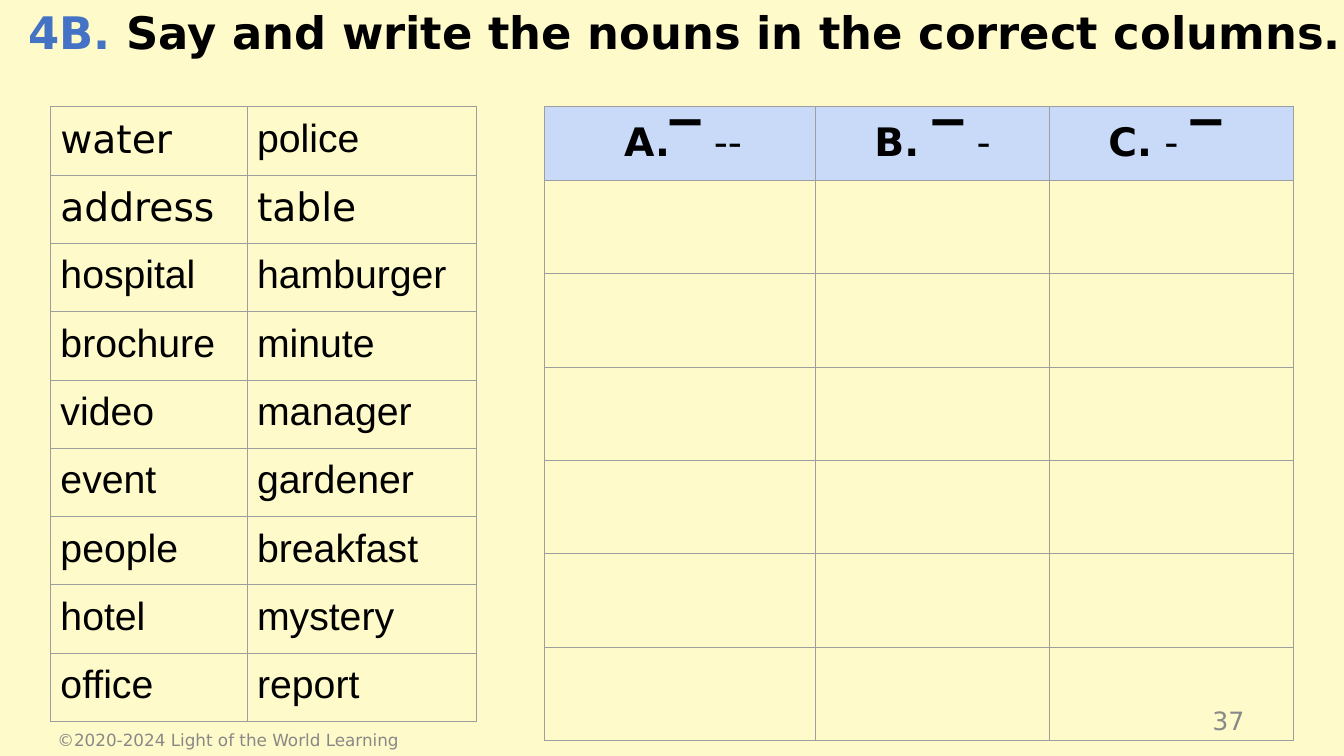
"""Build a slide for sorting nouns into three stress-pattern columns."""
from lxml import etree
from pptx import Presentation
from pptx.dml.color import RGBColor
from pptx.enum.text import MSO_ANCHOR, MSO_AUTO_SIZE, PP_ALIGN
from pptx.oxml.ns import qn
from pptx.util import Inches, Pt

TOP, MIDDLE = MSO_ANCHOR.TOP, MSO_ANCHOR.MIDDLE
LEFT, CENTER, RIGHT = PP_ALIGN.LEFT, PP_ALIGN.CENTER, PP_ALIGN.RIGHT
NO_AUTOFIT = MSO_AUTO_SIZE.NONE
CREAM = RGBColor(0xFE, 0xFA, 0xC9)
BLUE = RGBColor(0x44, 0x72, 0xC4)
PALE_BLUE = RGBColor(0xC9, 0xDA, 0xF8)
BLACK = RGBColor(0, 0, 0)
GRAY = RGBColor(0x88, 0x88, 0x88)
BORDER = RGBColor(0x9E, 0x9E, 0x9E)
SANS, ARIAL = "DejaVu Sans", "Arial"

WORDS = [
    ("water", "police"), ("address", "table"), ("hospital", "hamburger"),
    ("brochure", "minute"), ("video", "manager"), ("event", "gardener"),
    ("people", "breakfast"), ("hotel", "mystery"), ("office", "report"),
]
SANS_WORDS = {"water", "address", "table"}
PATTERNS = [
    [("▔ ", True), ("--", False)],
    [("B. ▔ ", True), ("-", False)],
    [("C.", True), (" - ", False), ("▔ ", True)],
]


def add_span(para, text, size, color, font=SANS, bold=False):
    span = para.add_run()
    span.text = text
    span.font.name = font
    span.font.size = Pt(size)
    span.font.bold = bold
    span.font.color.rgb = color


def add_grid(slide, left, widths, heights):
    frame = slide.shapes.add_table(
        len(heights), len(widths), Inches(left), Inches(1.06),
        Inches(sum(widths)), Inches(sum(heights)))
    grid = frame.table
    grid.first_row = grid.horz_banding = False
    for column, width in zip(grid.columns, widths):
        column.width = Inches(width)
    for row, height in zip(grid.rows, heights):
        row.height = Inches(height)
    for cell in grid.iter_cells():
        cell.margin_left = cell.margin_right = Inches(0.1)
        cell.margin_top = cell.margin_bottom = Inches(0.1)
        properties = cell._tc.get_or_add_tcPr()
        for side in ("a:lnL", "a:lnR", "a:lnT", "a:lnB"):
            line = etree.SubElement(properties, qn(side), w=str(Pt(0.75)))
            fill = etree.SubElement(line, qn("a:solidFill"))
            etree.SubElement(fill, qn("a:srgbClr"), val=str(BORDER))
        cell.fill.background()
    return grid


deck = Presentation()
deck.slide_width, deck.slide_height = Inches(13.33), Inches(7.5)
page = deck.slides.add_slide(deck.slide_layouts[5])
page.background.fill.solid()
page.background.fill.fore_color.rgb = CREAM

title = page.shapes.title
title.left, title.top = Inches(-0.15), Inches(0)
title.width, title.height = Inches(14.05), Inches(1.82)
title.text_frame.auto_size = NO_AUTOFIT
title.text_frame.word_wrap = True
title.text_frame.vertical_anchor = TOP
heading = title.text_frame.paragraphs[0]
heading.alignment = CENTER
add_span(heading, "4B. ", 32, BLUE, bold=True)
add_span(heading, "Say and write the nouns in the correct columns. ", 32, BLACK, bold=True)

word_grid = add_grid(page, 0.5, [1.95, 2.28], [6.1 / len(WORDS)] * len(WORDS))
for row, pair in enumerate(WORDS):
    for column, word in enumerate(pair):
        para = word_grid.cell(row, column).text_frame.paragraphs[0]
        add_span(para, word, 28, BLACK, SANS if word in SANS_WORDS else ARIAL)

answer_grid = add_grid(page, 5.4, [2.69, 2.32, 2.42], [0.73] + [0.926] * 6)
for column, pattern in enumerate(PATTERNS):
    cell = answer_grid.cell(0, column)
    cell.fill.solid()
    cell.fill.fore_color.rgb = PALE_BLUE
    para = cell.text_frame.paragraphs[0]
    if column == 0:
        settings = para._p.get_or_add_pPr()
        settings.set("marL", str(Inches(0.5)))
        settings.set("indent", str(Inches(-0.44)))
        bullet_color = etree.SubElement(settings, qn("a:buClr"))
        etree.SubElement(bullet_color, qn("a:srgbClr"), val=str(BLACK))
        etree.SubElement(settings, qn("a:buFont"), typeface=SANS)
        etree.SubElement(settings, qn("a:buAutoNum"), type="alphaUcPeriod")
    para.alignment = CENTER
    para.line_spacing = 1.07
    for text, bold in pattern:
        add_span(para, text, 28, BLACK, bold=bold)

for text, left, top, width, size, alignment in [
    ("37", 9.44, 6.95, 3, 18, RIGHT),
    ("©2020-2024 Light of the World Learning", 0.47, 7.14, 4.5, 12, LEFT),
]:
    box = page.shapes.add_textbox(Inches(left), Inches(top), Inches(width), Inches(0.4))
    box.text_frame.word_wrap = True
    box.text_frame.vertical_anchor = MIDDLE
    para = box.text_frame.paragraphs[0]
    para.alignment = alignment
    add_span(para, text, size, GRAY)

deck.save("out.pptx")
